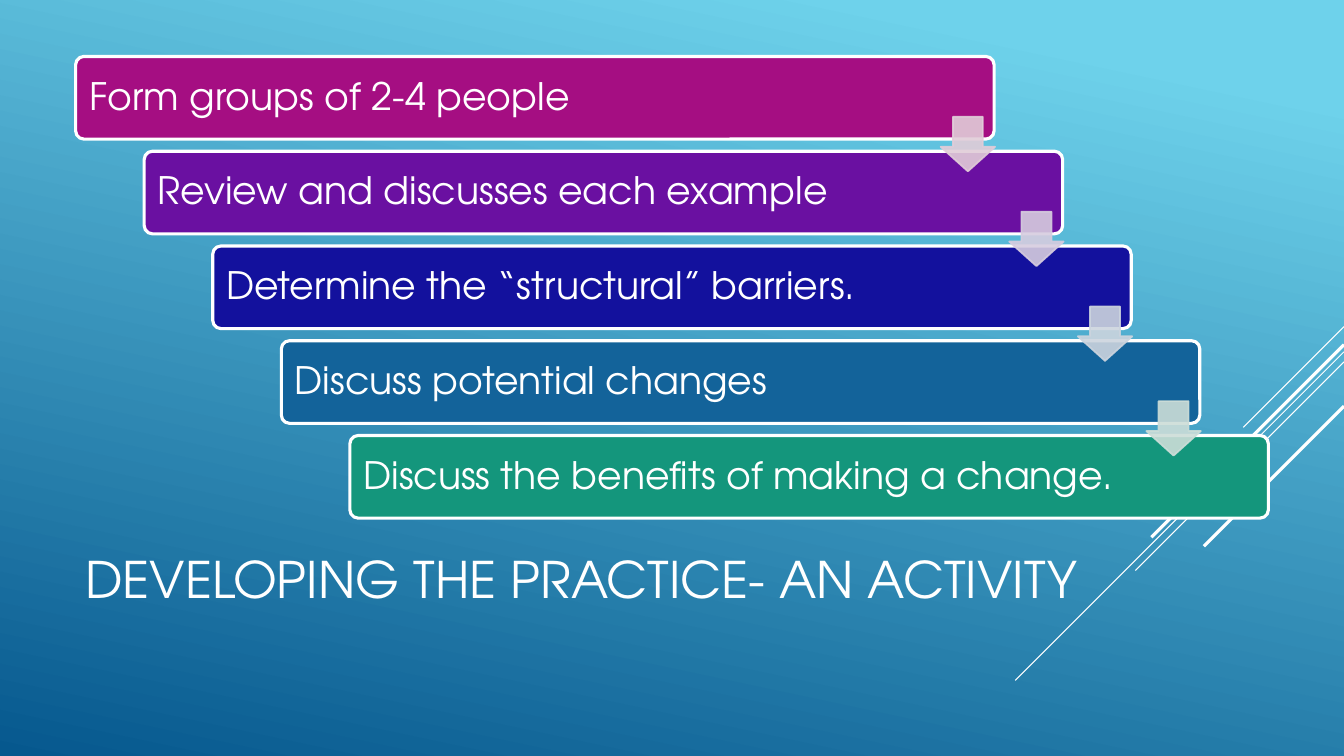
"""Build the slide for a group activity shown as a staircase of five steps."""
from lxml.etree import SubElement
from pptx import Presentation
from pptx.dml.color import RGBColor
from pptx.enum.shapes import MSO_CONNECTOR, MSO_SHAPE
from pptx.enum.text import MSO_ANCHOR, PP_ALIGN
from pptx.oxml.ns import qn
from pptx.util import Inches, Pt

COLORS = {"white": "FFFFFF", "sky": "6ED2EB", "deep": "06588E"}
FONT = "TeX Gyre Adventor"
SLIDE_WIDTH, SLIDE_HEIGHT = 13.33, 7.5
STEP_RIGHT, STEP_DOWN = 0.68, 0.94
TITLE = "DEVELOPING THE PRACTICE- AN ACTIVITY"
STEPS = [
    ("Form groups of 2-4 people", "A50E82"),
    ("Review and discusses each example", "6A10A1"),
    ("Determine the “structural” barriers.", "13119D"),
    ("Discuss potential changes", "13639A"),
    ("Discuss the benefits of making a change.", "14967C"),
]
ARROW_COLORS = ["E1CCD8", "D6CCDF", "CCD4DE", "CCDDD8"]
DIAGONALS = [(3.24, 1, 0.75), (3.49, 3.26, 0.75), (3.59, 2.07, 0.75),
             (3.42, 1.91, 2.25), (4.03, 1.39, 2.25)]


def set_format(target, values):
    """Set each named attribute of the target."""
    for name, value in values.items():
        setattr(target, name, value)


def paint_background(slide):
    """Give the slide its slanted blue gradient."""
    fill = slide.background.fill
    fill.gradient()
    fill.gradient_angle = 258
    for stop, (position, color) in zip(fill.gradient_stops, [(0.1, "sky"), (1, "deep")]):
        stop.position = position
        stop.color.rgb = RGBColor.from_string(COLORS[color])


def add_diagonal(slide, top, run, weight):
    """Draw a 45 degree line down and left from the right edge."""
    diagonal = slide.shapes.add_connector(
        MSO_CONNECTOR.STRAIGHT, Inches(SLIDE_WIDTH), Inches(top),
        Inches(SLIDE_WIDTH - run), Inches(top + run))
    diagonal.line.width = Pt(weight)
    diagonal.line.color.rgb = RGBColor.from_string(COLORS["white"])
    SubElement(diagonal.element.spPr, qn("a:effectLst"))


def write_text(holder, text, size, margin, spacing):
    """Write one left-aligned white line, centred vertically."""
    frame = holder.text_frame
    set_format(frame, {
        "word_wrap": True, "vertical_anchor": MSO_ANCHOR.MIDDLE,
        "margin_left": Inches(margin), "margin_right": Inches(margin),
    })
    paragraph = frame.paragraphs[0]
    set_format(paragraph, {"alignment": PP_ALIGN.LEFT, "line_spacing": spacing})
    run = paragraph.add_run()
    run.text = text
    set_format(run.font, {"name": FONT, "size": Pt(size)})
    run.font.color.rgb = RGBColor.from_string(COLORS["white"])


def add_figure(slide, preset, box, adjustments, fill, outline, weight):
    """Add a flat preset shape with a solid fill and outline."""
    figure = slide.shapes.add_shape(preset, *map(Inches, box))
    figure.shadow.inherit = False
    for index, value in enumerate(adjustments):
        figure.adjustments[index] = value
    figure.fill.solid()
    figure.fill.fore_color.rgb = RGBColor.from_string(fill)
    figure.line.color.rgb = RGBColor.from_string(outline)
    figure.line.width = Pt(weight)
    return figure


def add_step(slide, index, text, color):
    """Add one bar of the staircase."""
    box = (0.75 + index * STEP_RIGHT, 0.56 + index * STEP_DOWN, 9.11, 0.82)
    bar = add_figure(slide, MSO_SHAPE.ROUNDED_RECTANGLE, box, [0.1],
                     color, COLORS["white"], 2.25)
    write_text(bar, text, 27, 0.11, 0.9)


def add_step_arrow(slide, index, color):
    """Add the translucent arrow that leads to the next bar."""
    box = (9.33 + index * STEP_RIGHT, 1.16 + index * STEP_DOWN, 0.54, 0.54)
    arrow = add_figure(slide, MSO_SHAPE.DOWN_ARROW, box, [0.55, 0.45], color, color, 1.25)
    for tint in arrow.element.spPr.iter(qn("a:srgbClr")):
        SubElement(tint, qn("a:alpha"), val="90000")


def add_title(slide):
    """Add the title below the staircase."""
    title = slide.shapes.add_textbox(Inches(0.75), Inches(4.91), Inches(12), Inches(1.65))
    write_text(title, TITLE, 36, 0.1, 1.0)


def main():
    """Build and save the slide."""
    deck = Presentation()
    set_format(deck, {"slide_width": Inches(SLIDE_WIDTH), "slide_height": Inches(SLIDE_HEIGHT)})
    slide = deck.slides.add_slide(deck.slide_layouts[6])
    paint_background(slide)
    for top, run, weight in DIAGONALS:
        add_diagonal(slide, top, run, weight)
    add_title(slide)
    for index, (text, color) in enumerate(STEPS):
        add_step(slide, index, text, color)
    for index, color in enumerate(ARROW_COLORS):
        add_step_arrow(slide, index, color)
    deck.save("out.pptx")


if __name__ == "__main__":
    main()
